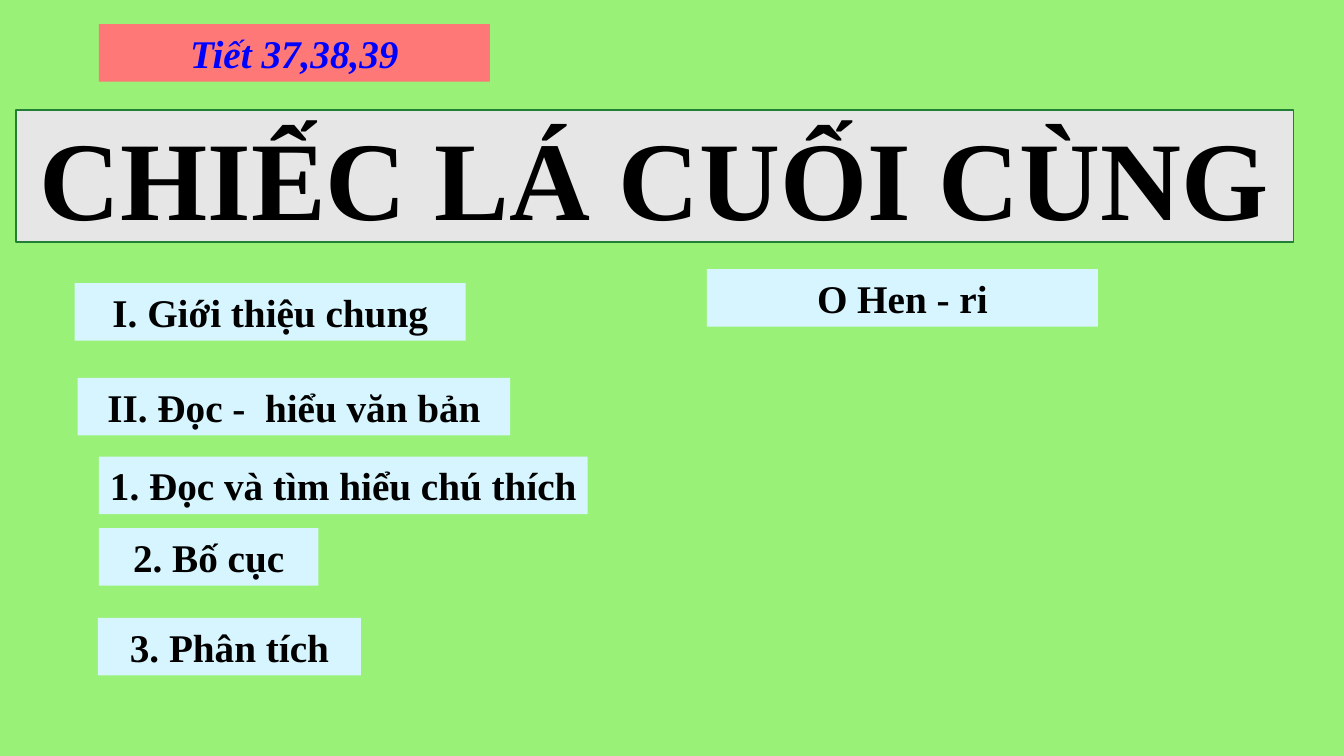
"""Build the lesson outline slide for "Chiếc lá cuối cùng"."""
from dataclasses import dataclass

from lxml.etree import SubElement
from pptx import Presentation
from pptx.dml.color import RGBColor
from pptx.enum.shapes import MSO_SHAPE as Preset
from pptx.enum.text import MSO_ANCHOR as Anchor, MSO_AUTO_SIZE as AutoSize, PP_ALIGN as Align
from pptx.oxml.ns import qn
from pptx.shapes.autoshape import Shape
from pptx.slide import Slide
from pptx.util import Inches, Pt

COLORS = {
    "background": "99F178",
    "lesson": "FF7878",
    "lesson_text": "0000FF",
    "banner": "E7E6E6",
    "banner_line": "218034",
    "label": "D6F5FE",
    "text": "000000",
}
FONT = "Times New Roman"
WIDTH, HEIGHT = Inches(13.33), Inches(7.5)
LABEL_HEIGHT = 7.6


@dataclass(frozen=True)
class Label:
    """A one-line box placed in percent of the slide's width and height."""
    text: str
    left: float
    top: float
    width: float = 29.11
    height: float = LABEL_HEIGHT
    fill: str = "label"
    color: str = "text"
    size: int = 28
    italic: bool = False


TITLE = Label("CHIẾC LÁ CUỐI CÙNG", 1.2, 14.53, 95.05, 17.47, fill="banner", size=80)
LABELS = [
    Label("Tiết 37,38,39", 7.35, 3.2, fill="lesson", color="lesson_text", italic=True),
    Label("O Hen - ri", 52.59, 35.6),
    Label("I. Giới thiệu chung", 5.55, 37.47),
    Label("II. Đọc -  hiểu văn bản", 5.78, 50, 32.18),
    Label("1. Đọc và tìm hiểu chú thích", 7.35, 60.4, 36.38),
    Label("2. Bố cục", 7.35, 69.87, 16.35),
    Label("3. Phân tích", 7.28, 81.73, 19.58),
]


def rgb(name: str) -> RGBColor:
    """Return the named colour."""
    return RGBColor.from_string(COLORS[name])


def frame(label: Label) -> tuple[int, int, int, int]:
    """Turn the label's percentages into slide lengths."""
    return (round(WIDTH * label.left / 100), round(HEIGHT * label.top / 100),
            round(WIDTH * label.width / 100), round(HEIGHT * label.height / 100))


def format_label(shape: Shape, label: Label) -> None:
    """Fill the shape and set its centred bold text."""
    shape.fill.solid()
    shape.fill.fore_color.rgb = rgb(label.fill)
    text_frame = shape.text_frame
    text_frame.text = label.text
    text_frame.word_wrap = True
    text_frame.auto_size = AutoSize.NONE
    text_frame.vertical_anchor = Anchor.MIDDLE
    text_frame.margin_left = text_frame.margin_right = Inches(0.05)
    paragraph = text_frame.paragraphs[0]
    paragraph.alignment = Align.CENTER
    font = paragraph.runs[0].font
    font.name, font.size = FONT, Pt(label.size)
    font.bold, font.italic = True, label.italic
    font.color.rgb = rgb(label.color)


def place_title(slide: Slide, label: Label) -> None:
    """Turn the title placeholder into the rounded banner."""
    title = slide.shapes.title
    title.left, title.top, title.width, title.height = frame(label)
    geometry = SubElement(title.element.spPr, qn("a:prstGeom"), prst="roundRect")
    SubElement(geometry, qn("a:avLst"))
    format_label(title, label)
    title.line.color.rgb = rgb("banner_line")
    title.line.width = Pt(1)


def add_label(slide: Slide, label: Label) -> None:
    """Add a flat rectangle holding one line of text."""
    shape = slide.shapes.add_shape(Preset.RECTANGLE, *frame(label))
    shape.shadow.inherit = False
    shape.line.fill.background()
    format_label(shape, label)


def main() -> None:
    """Create and save the presentation."""
    presentation = Presentation()
    presentation.slide_width, presentation.slide_height = WIDTH, HEIGHT
    slide = presentation.slides.add_slide(presentation.slide_layouts.get_by_name("Title Only"))
    slide.background.fill.solid()
    slide.background.fill.fore_color.rgb = rgb("background")
    place_title(slide, TITLE)
    for label in LABELS:
        add_label(slide, label)
    presentation.save("out.pptx")


if __name__ == "__main__":
    main()
